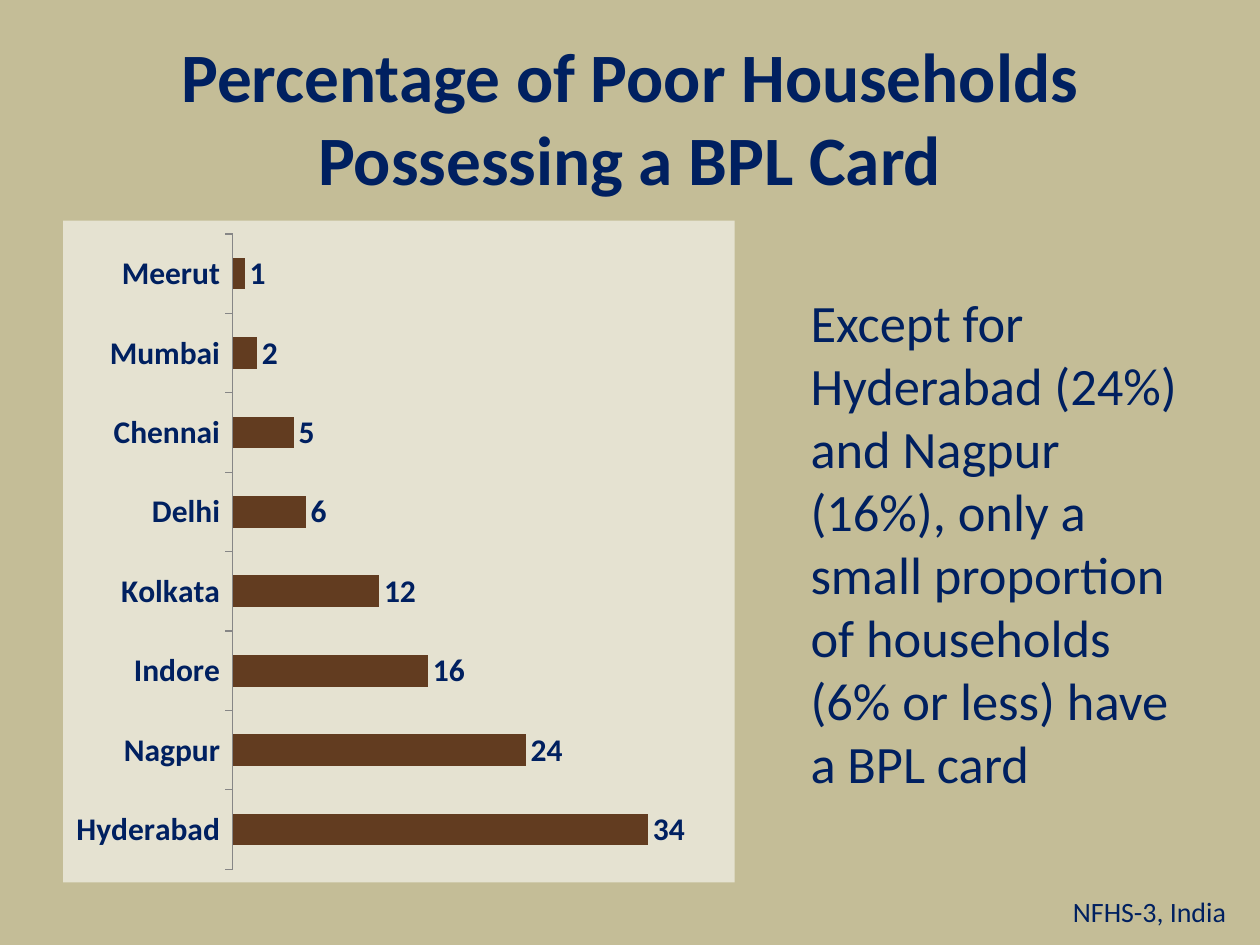
from dataclasses import dataclass

from lxml import etree
from pptx import Presentation
from pptx import util as u
from pptx.chart.data import CategoryChartData
from pptx.dml.color import RGBColor
from pptx.enum import chart as ch, text
from pptx.oxml import parse_xml

COLORS = {
    "background": "C4BD97",
    "panel": "E5E2D1",
    "bar": "623C20",
    "text": "002060",
    "axis": "868686",
}
FONT = "Calibri"
BPL_CARD_SHARE = {
    "Hyderabad": 34, "Nagpur": 24, "Indore": 16, "Kolkata": 12,
    "Delhi": 6, "Chennai": 5, "Mumbai": 2, "Meerut": 1,
}
CHART_NS = "http://schemas.openxmlformats.org/drawingml/2006/chart"
DRAWING_NS = "http://schemas.openxmlformats.org/drawingml/2006/main"


@dataclass
class TextBlock:
    words: str
    left: float
    top: float
    width: float
    height: float
    size: float
    bold: bool = False
    align: text.PP_ALIGN = text.PP_ALIGN.LEFT
    anchor: text.MSO_ANCHOR = text.MSO_ANCHOR.TOP


TEXT_BLOCKS = [
    TextBlock("Percentage of Poor Households Possessing a BPL Card",
              1.27, 0.76, 22.86, 3.18, 39.6, True,
              text.PP_ALIGN.CENTER, text.MSO_ANCHOR.MIDDLE),
    TextBlock("Except for Hyderabad (24%) and Nagpur (16%), only a small "
              "proportion of households (6% or less) have a BPL card",
              16.09, 5.72, 8.04, 10.52, 30),
    TextBlock("NFHS-3, India", 21.38, 17.9, 4.02, 0.94, 16),
]


def rgb(name: str) -> RGBColor:
    return RGBColor.from_string(COLORS[name])


def style_font(font, size: float, bold: bool) -> None:
    font.name = FONT
    font.size = u.Pt(size)
    font.bold = bold
    font.color.rgb = rgb("text")


def add_text(s, block: TextBlock) -> None:
    sp = s.shapes.add_textbox(u.Cm(block.left), u.Cm(block.top),
                              u.Cm(block.width), u.Cm(block.height))
    tf = sp.text_frame
    tf.word_wrap = True
    tf.vertical_anchor = block.anchor
    tf.text = block.words
    p = tf.paragraphs[0]
    p.alignment = block.align
    style_font(p.runs[0].font, block.size, block.bold)


def fill_chart_area(chart, color: str) -> None:
    """Give the whole chart area a solid fill without an outline."""
    sp_pr = parse_xml(
        f'<c:spPr xmlns:c="{CHART_NS}" xmlns:a="{DRAWING_NS}">'
        f'<a:solidFill><a:srgbClr val="{COLORS[color]}"/></a:solidFill>'
        '<a:ln><a:noFill/></a:ln></c:spPr>')
    chart.element.find(etree.QName(CHART_NS, "chart").text).addnext(sp_pr)


def add_share_chart(s, shares: dict[str, int]) -> None:
    data = CategoryChartData(number_format="0")
    data.categories = list(shares)
    data.add_series("Series 1", list(shares.values()))
    chart = s.shapes.add_chart(ch.XL_CHART_TYPE.BAR_CLUSTERED, u.Cm(1.27), u.Cm(4.45),
                               u.Cm(13.54), u.Cm(13.34), data).chart
    chart.has_legend = False
    chart.has_title = False
    chart.font.name = FONT
    chart.font.size = u.Pt(10)
    fill_chart_area(chart, "panel")

    cities = chart.category_axis
    cities.major_tick_mark = ch.XL_TICK_MARK.OUTSIDE
    cities.format.line.color.rgb = rgb("axis")
    style_font(cities.tick_labels.font, 18, True)

    values = chart.value_axis
    values.visible = False
    values.has_major_gridlines = False
    values.minimum_scale, values.maximum_scale = 0, 40

    plot = chart.plots[0]
    plot.gap_width = 150
    plot.vary_by_categories = False
    bars = plot.series[0].format.fill
    bars.solid()
    bars.fore_color.rgb = rgb("bar")

    plot.has_data_labels = True
    labels = plot.data_labels
    labels.show_value = True
    labels.number_format = "0"
    labels.number_format_is_linked = False
    labels.position = ch.XL_LABEL_POSITION.OUTSIDE_END
    style_font(labels.font, 18, True)


def main() -> None:
    prs = Presentation()
    prs.slide_width, prs.slide_height = u.Cm(25.4), u.Cm(19.05)
    s = prs.slides.add_slide(prs.slide_layouts[6])
    s.background.fill.solid()
    s.background.fill.fore_color.rgb = rgb("background")
    add_share_chart(s, BPL_CARD_SHARE)
    for block in TEXT_BLOCKS:
        add_text(s, block)
    prs.save("out.pptx")


if __name__ == "__main__":
    main()
